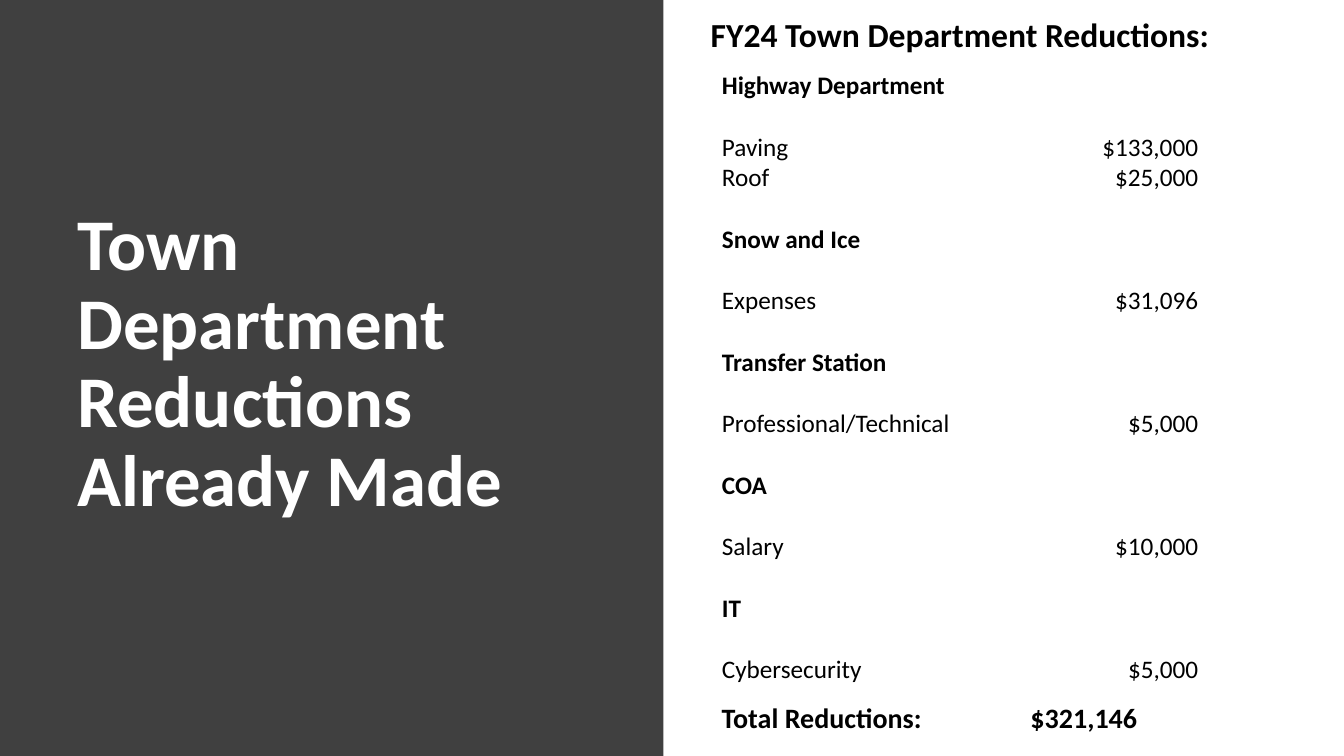
from pptx import Presentation, util as u
from pptx.dml.color import RGBColor
from pptx.enum import shapes, text

WHITE = RGBColor(0xFF, 0xFF, 0xFF)
BLACK = RGBColor(0x00, 0x00, 0x00)
CHARCOAL = RGBColor(0x40, 0x40, 0x40)
FONT = "Calibri"

DEPARTMENTS = [
    ("Highway Department", [("Paving", "$133,000 "), ("Roof", "$25,000 ")]),
    ("Snow and Ice", [("Expenses", "$31,096 ")]),
    ("Transfer Station", [("Professional/Technical", "$5,000 ")]),
    ("COA", [("Salary", "$10,000 ")]),
    ("IT", [("Cybersecurity", "$5,000 ")]),
]


def add_run(paragraph, words, size, color=BLACK, bold=True):
    run = paragraph.add_run()
    run.text = words
    run.font.name = FONT
    run.font.size = u.Pt(size)
    run.font.bold = bold
    run.font.color.rgb = color


def add_text(left, top, width, height, words, size, color=BLACK):
    """Add a wrapping one-paragraph text box and return its frame."""
    box = slide.shapes.add_textbox(*map(u.Inches, (left, top, width, height)))
    frame = box.text_frame
    frame.word_wrap = True
    add_run(frame.paragraphs[0], words, size, color)
    return frame


presentation = Presentation()
presentation.slide_width = u.Inches(13.33)
presentation.slide_height = u.Inches(7.5)
slide = presentation.slides.add_slide(presentation.slide_layouts[6])

# Title panel
panel = slide.shapes.add_shape(
    shapes.MSO_SHAPE.RECTANGLE, 0, 0, u.Inches(6.58), presentation.slide_height)
panel.shadow.inherit = False
panel.fill.solid()
panel.fill.fore_color.rgb = CHARCOAL
panel.line.fill.background()

title = add_text(0.67, 0.66, 5.24, 5.92,
                 "Town Department Reductions Already Made", 52, WHITE)
title.vertical_anchor = text.MSO_ANCHOR.MIDDLE
title.paragraphs[0].line_spacing = 0.9

add_text(6.95, 0.09, 6.25, 0.5, "FY24 Town Department Reductions:", 24)

# Reductions table: heading, spacer, items, then a spacer before the next one
rows = []
for department, items in DEPARTMENTS:
    if rows:
        rows.append(("", "", False))
    rows += [(department, "", True), ("", "", False)]
    rows += [(item, amount, False) for item, amount in items]

table_height = u.Inches(6.11)
table = slide.shapes.add_table(
    len(rows), 2, u.Inches(7.15), u.Inches(0.7), u.Inches(4.8), table_height).table
table.first_row = False
table.horz_banding = False
table.columns[0].width = u.Inches(3.47)
table.columns[1].width = u.Inches(1.33)

for table_row, (label, amount, is_heading) in zip(table.rows, rows):
    table_row.height = table_height // len(rows)
    for cell, words in zip(table_row.cells, (label, amount)):
        cell.fill.background()
        cell.vertical_anchor = text.MSO_ANCHOR.BOTTOM
        cell.margin_left = cell.margin_right = u.Inches(0.01)
        cell.margin_top = cell.margin_bottom = 0
        paragraph = cell.text_frame.paragraphs[0]
        if words:
            add_run(paragraph, words, 18, bold=is_heading)
        else:
            # Keeps an empty cell as tall as a line of 18 pt text
            paragraph._p.get_or_add_endParaRPr().set("sz", "1800")
        if words == amount:
            paragraph.alignment = text.PP_ALIGN.RIGHT

add_text(7.06, 6.9, 5.5, 0.44, "Total Reductions: \t\t $321,146", 20)

presentation.save("out.pptx")
